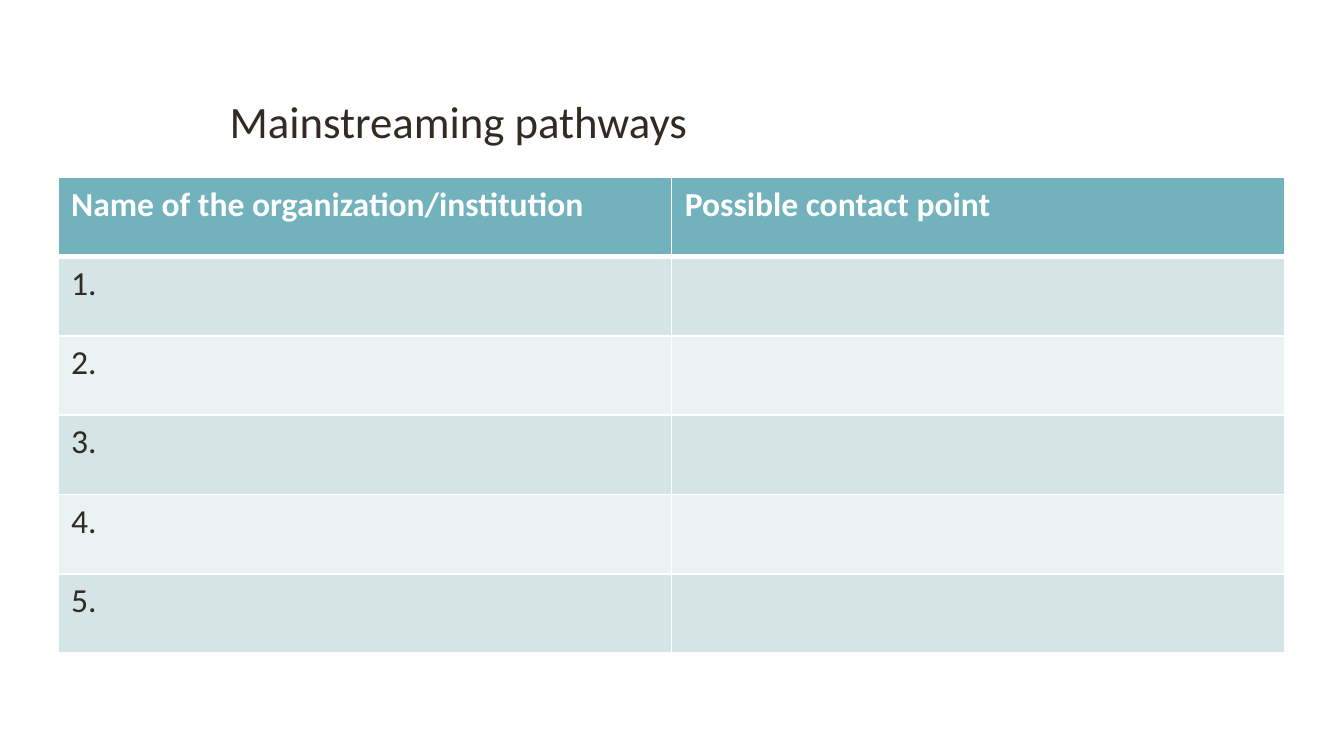
from dataclasses import dataclass

from lxml import etree
from pptx import Presentation
from pptx import util as u
from pptx.dml.color import RGBColor
from pptx.enum import text
from pptx.oxml.ns import qn


@dataclass(frozen=True)
class Theme:
    font: str = "Calibri"
    title_size: int = 24
    cell_size: int = 18
    ink: str = "302C24"
    white: str = "FFFFFF"
    header: str = "71B2BC"
    bands: tuple = ("D5E4E7", "EBF2F3")
    thin: int = 1
    thick: int = 3


class SlideBuilder:
    def __init__(self, s, theme):
        self.s = s
        self.theme = theme

    def run(self, p, words, size, color, bold=False):
        r = p.add_run()
        r.text = words
        r.font.name = self.theme.font
        r.font.size = u.Pt(size)
        r.font.bold = bold
        r.font.color.rgb = RGBColor.from_string(color)

    def title(self, words, left, top, width, height):
        sp = self.s.shapes.add_textbox(*map(u.Inches, (left, top, width, height)))
        tf = sp.text_frame
        tf.word_wrap = True
        tf.vertical_anchor = text.MSO_ANCHOR.TOP
        p = tf.paragraphs[0]
        p.line_spacing = 0.9
        self.run(p, words, self.theme.title_size, self.theme.ink)

    def borders(self, cell, top, bottom):
        tc_pr = cell._tc.get_or_add_tcPr()
        thin = self.theme.thin
        for side, width in (("L", thin), ("R", thin), ("T", top), ("B", bottom)):
            ln = etree.SubElement(tc_pr, qn(f"a:ln{side}"), w=str(u.Pt(width)))
            fill = etree.SubElement(ln, qn("a:solidFill"))
            etree.SubElement(fill, qn("a:srgbClr"), val=self.theme.white)

    def table(self, rows, left, top, width, height):
        t = self.theme
        box = map(u.Inches, (left, top, width, height))
        table = self.s.shapes.add_table(len(rows), len(rows[0]), *box).table
        for i, row in enumerate(rows):
            is_header = i == 0
            fill = t.header if is_header else t.bands[(i - 1) % 2]
            color = t.white if is_header else t.ink
            for j, words in enumerate(row):
                cell = table.cell(i, j)
                self.borders(cell, t.thick if i == 1 else t.thin,
                             t.thick if is_header else t.thin)
                cell.fill.solid()
                cell.fill.fore_color.rgb = RGBColor.from_string(fill)
                p = cell.text_frame.paragraphs[0]
                if words:
                    self.run(p, words, t.cell_size, color, is_header)
                else:
                    p.font.size = u.Pt(t.cell_size)


def main():
    prs = Presentation()
    prs.slide_width = u.Inches(10)
    prs.slide_height = u.Inches(10 * 9 / 16)
    s = prs.slides.add_slide(prs.slide_layouts[6])
    builder = SlideBuilder(s, Theme())
    builder.title("Mainstreaming pathways", 1.61, 0.69, 7.62, 0.63)
    header = ("Name of the organization/institution", "Possible contact point")
    entries = [(f"{n}.", "") for n in range(1, 6)]
    builder.table([header, *entries], 0.43, 1.32, 9.13, 3.54)
    prs.save("out.pptx")


if __name__ == "__main__":
    main()
